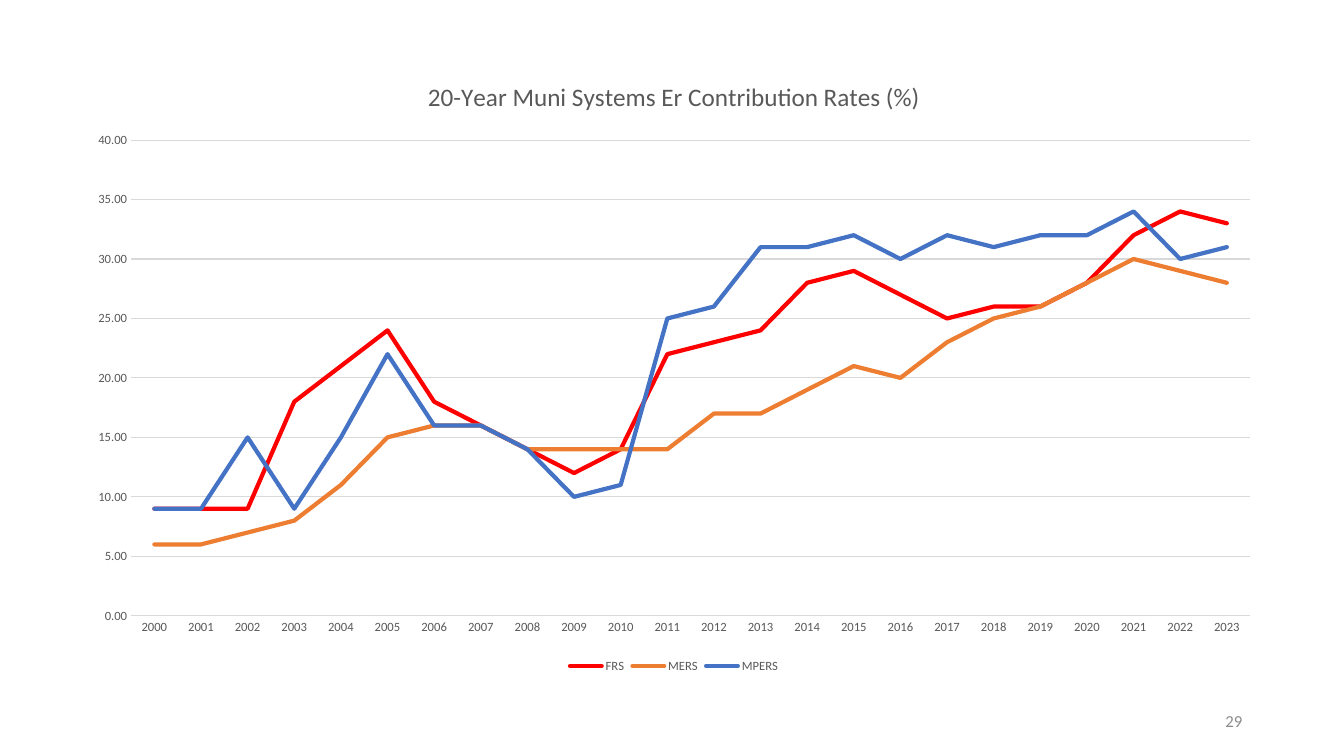
import dataclasses

import lxml.etree
import pptx
import pptx.chart.data
import pptx.dml.color
import pptx.enum.chart
import pptx.enum.text
import pptx.oxml.ns
import pptx.util

Inches = pptx.util.Inches
Pt = pptx.util.Pt


@dataclasses.dataclass(frozen=True)
class Theme:
    font: str = "Calibri"
    text: str = "595959"
    rule: str = "D9D9D9"
    page_number: str = "8C8C8C"
    title_size: float = 18
    label_size: float = 9
    page_number_size: float = 12
    rule_width: float = 0.75
    series_width: float = 3


THEME = Theme()
YEARS = [str(year) for year in range(2000, 2024)]
RATES = {
    "FRS": ("FF0000", [9, 9, 9, 18, 21, 24, 18, 16, 14, 12, 14, 22,
                       23, 24, 28, 29, 27, 25, 26, 26, 28, 32, 34, 33]),
    "MERS": ("ED7D31", [6, 6, 7, 8, 11, 15, 16, 16, 14, 14, 14, 14,
                        17, 17, 19, 21, 20, 23, 25, 26, 28, 30, 29, 28]),
    "MPERS": ("4472C4", [9, 9, 15, 9, 15, 22, 16, 16, 14, 10, 11, 25,
                         26, 31, 31, 32, 30, 32, 31, 32, 32, 34, 30, 31]),
}


def style_font(font, size, color):
    font.name = THEME.font
    font.size = Pt(size)
    font.bold = False
    font.color.rgb = pptx.dml.color.RGBColor.from_string(color)


def style_line(line, color, width):
    line.color.rgb = pptx.dml.color.RGBColor.from_string(color)
    line.width = Pt(width)


def set_layout(element, index, **settings):
    """Place a chart part by fractions of the chart's width and height."""
    tag = pptx.oxml.ns.qn
    for old_layout in element.findall(tag("c:layout")):
        element.remove(old_layout)
    layout = lxml.etree.Element(tag("c:layout"))
    manual = lxml.etree.SubElement(layout, tag("c:manualLayout"))
    for name, value in settings.items():
        lxml.etree.SubElement(manual, tag("c:" + name)).set("val", str(value))
    element.insert(index, layout)


def style_axes(chart):
    for axis in (chart.category_axis, chart.value_axis):
        axis.major_tick_mark = pptx.enum.chart.XL_TICK_MARK.NONE
        axis.minor_tick_mark = pptx.enum.chart.XL_TICK_MARK.NONE
        style_font(axis.tick_labels.font, THEME.label_size, THEME.text)
    style_line(chart.category_axis.format.line, THEME.rule, THEME.rule_width)

    rate_axis = chart.value_axis
    rate_axis.minimum_scale = 0
    rate_axis.maximum_scale = 40
    rate_axis.major_unit = 5
    rate_axis.tick_labels.number_format = "0.00"
    rate_axis.tick_labels.number_format_is_linked = False
    rate_axis.format.line.fill.background()
    style_line(rate_axis.major_gridlines.format.line, THEME.rule, THEME.rule_width)


def add_rates_chart(slide, left, top, width, height):
    data = pptx.chart.data.CategoryChartData(number_format="0.00")
    data.categories = YEARS
    for name, (_, rates) in RATES.items():
        data.add_series(name, rates)
    chart = slide.shapes.add_chart(
        pptx.enum.chart.XL_CHART_TYPE.LINE, left, top, width, height, data).chart
    style_font(chart.font, THEME.label_size, THEME.text)

    chart.has_title = True
    title = chart.chart_title
    title.include_in_layout = False
    title.text_frame.text = "20-Year Muni Systems Er Contribution Rates (%)"
    style_font(title.text_frame.paragraphs[0].runs[0].font, THEME.title_size, THEME.text)
    set_layout(title._element, 1, xMode="edge", yMode="edge",
               x=Inches(3.47) / width, y=Inches(0.17) / height)

    plot_area = chart._chartSpace.xpath("c:chart/c:plotArea")[0]
    set_layout(plot_area, 0, layoutTarget="inner", xMode="edge", yMode="edge",
               x=Inches(0.57) / width, y=Inches(0.82) / height,
               w=Inches(11.1) / width, h=Inches(4.72) / height)

    chart.has_legend = True
    chart.legend.position = pptx.enum.chart.XL_LEGEND_POSITION.BOTTOM
    chart.legend.include_in_layout = False
    style_font(chart.legend.font, THEME.label_size, THEME.text)

    style_axes(chart)
    chart.plots[0].vary_by_categories = False
    for series in chart.plots[0].series:
        series.smooth = False
        series.marker.style = pptx.enum.chart.XL_MARKER_STYLE.NONE
        style_line(series.format.line, RATES[series.name][0], THEME.series_width)
        series.format.line._get_or_add_ln().set("cap", "rnd")


def add_page_number(slide, left, top, width, height):
    text_frame = slide.shapes.add_textbox(left, top, width, height).text_frame
    text_frame.word_wrap = True
    text_frame.vertical_anchor = pptx.enum.text.MSO_ANCHOR.MIDDLE
    text_frame.text = "29"
    paragraph = text_frame.paragraphs[0]
    paragraph.alignment = pptx.enum.text.PP_ALIGN.RIGHT
    style_font(paragraph.runs[0].font, THEME.page_number_size, THEME.page_number)


def main():
    presentation = pptx.Presentation()
    presentation.slide_width = Inches(13.33)
    presentation.slide_height = Inches(7.5)
    slide = presentation.slides.add_slide(presentation.slide_layouts[6])
    add_page_number(slide, Inches(9.42), Inches(6.95), Inches(3), Inches(0.4))
    add_rates_chart(slide, Inches(0.73), Inches(0.57), Inches(11.91), Inches(6.15))
    presentation.save("out.pptx")


if __name__ == "__main__":
    main()
